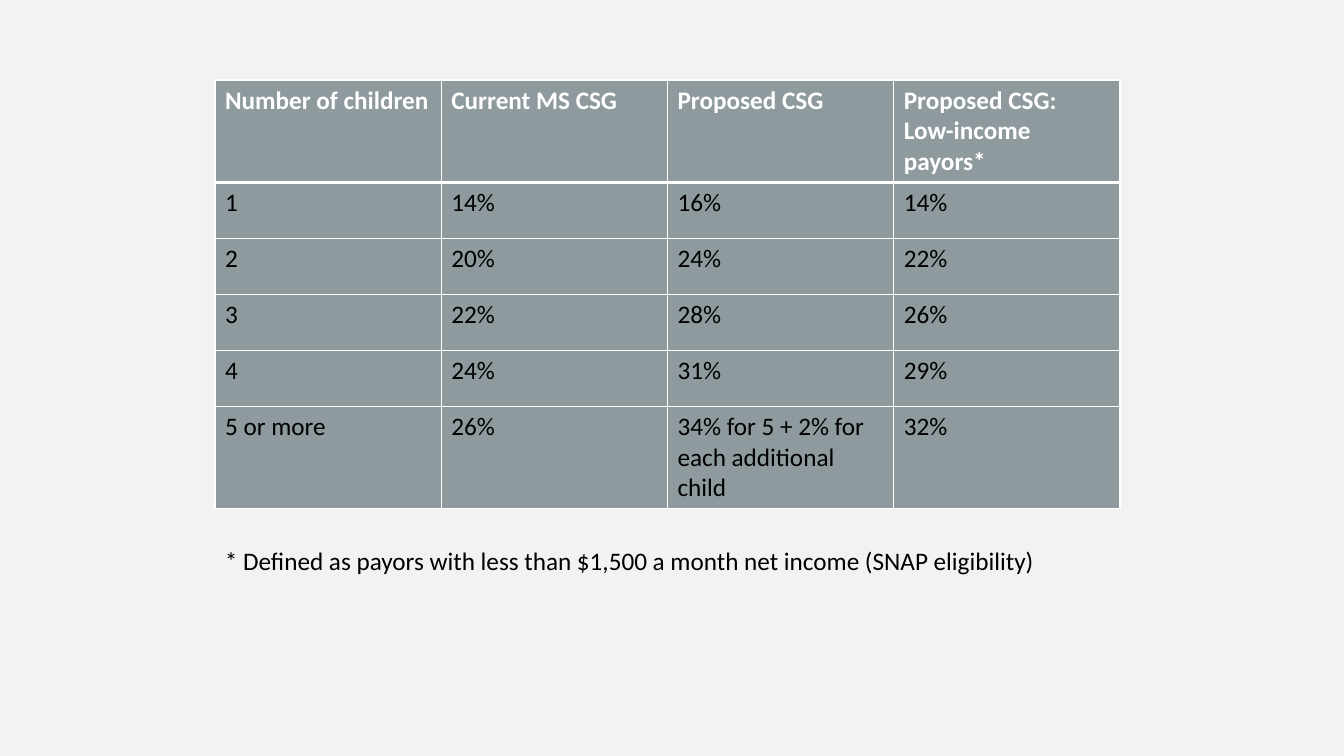
from pptx import Presentation
from pptx.dml.color import RGBColor as Rgb
from pptx.enum.text import MSO_AUTO_SIZE as Fit
from pptx.oxml.ns import qn
from pptx.util import Pt
from lxml.etree import SubElement as Sub

# Content
ROWS = [
    ("Number of children", "Current MS CSG", "Proposed CSG", "Proposed CSG:\vLow-income\vpayors*"),
    ("1", "14%", "16%", "14%"),
    ("2", "20%", "24%", "22%"),
    ("3", "22%", "28%", "26%"),
    ("4", "24%", "31%", "29%"),
    ("5 or more", "26%", "34% for 5 + 2% for each additional child", "32%"),
]
NOTE = "* Defined as payors with less than $1,500 a month net income (SNAP eligibility)"

# Layout in px
LEFT, TOP, WIDE = 215, 80, 905
TALL, LOW = 102, 56
HIGHS = [TALL] + [LOW] * (len(ROWS) - 2) + [TALL]
NOTE_TOP, NOTE_HIGH = 540, 40
WHITE, BLACK, GREY, PALE = "FFFFFF", "000000", "8E9A9E", "F2F2F2"


def px(n):
    return round(n * 914400 / 100.8)


def paint(fill, color):
    fill.solid()
    fill.fore_color.rgb = Rgb.from_string(color)


def write(frame, text, size=18, color=BLACK, bold=False):
    para = frame.paragraphs[0]
    para.text = text
    for run in para.runs:
        font = run.font
        font.name, font.size, font.bold = "Calibri", Pt(size), bold
        font.color.rgb = Rgb.from_string(color)


def edge(cell, **sides):
    """Draw cell borders; they must come before the cell's fill."""
    props = cell._tc.get_or_add_tcPr()
    for side, width in sides.items():
        line = Sub(props, qn("a:ln" + side), w=str(Pt(width)))
        solid = Sub(line, qn("a:solidFill"))
        Sub(solid, qn("a:srgbClr"), val=WHITE)


def main():
    deck = Presentation()
    deck.slide_width, deck.slide_height = px(1344), px(756)
    slide = deck.slides.add_slide(deck.slide_layouts[6])
    paint(slide.background.fill, PALE)

    # Rate table
    table = slide.shapes.add_table(
        len(ROWS), len(ROWS[0]), px(LEFT), px(TOP), px(WIDE), px(sum(HIGHS))).table
    table.horz_banding = False
    for r, row in enumerate(ROWS):
        head = r == 0
        table.rows[r].height = px(HIGHS[r])
        for c, text in enumerate(row):
            cell = table.cell(r, c)
            edge(cell, L=1, R=1, T=3 if r == 1 else 1, B=3 if head else 1)
            paint(cell.fill, GREY)
            write(cell.text_frame, text, color=WHITE if head else BLACK, bold=head)

    # Footnote
    box = slide.shapes.add_textbox(px(LEFT), px(NOTE_TOP), px(WIDE), px(NOTE_HIGH))
    box.text_frame.word_wrap = True
    box.text_frame.auto_size = Fit.SHAPE_TO_FIT_TEXT
    write(box.text_frame, NOTE)

    deck.save("out.pptx")


if __name__ == "__main__":
    main()
